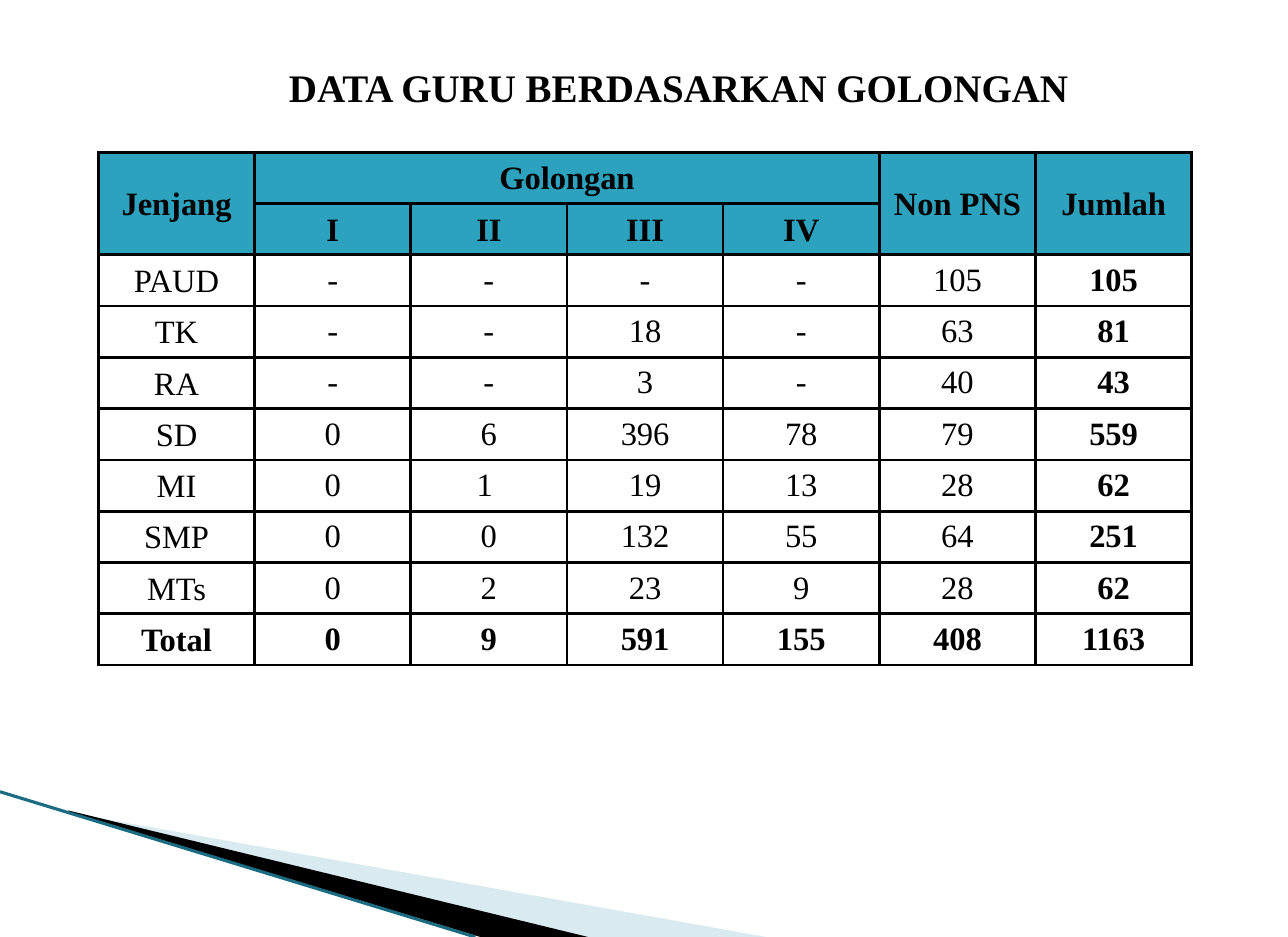
from lxml.etree import SubElement
from pptx import Presentation
from pptx.dml.color import RGBColor
from pptx.enum.shapes import MSO_CONNECTOR as Connector
from pptx.enum.text import MSO_ANCHOR as Anchor, PP_ALIGN as Align
from pptx.oxml.ns import qn
from pptx.util import Inches, Pt

COLORS = {"ink": "000000", "header": "2DA2BF", "pale": "A0CBDC", "edge": "1B6B82"}
FONT = "Times New Roman"
GRID_COLUMNS, GRID_ROWS = 550, 400

HEADINGS = [
    ["Jenjang", "Golongan", "", "", "", "Non PNS", "Jumlah"],
    ["", "I", "II", "III", "IV", "", ""],
]
TEACHERS = [
    ["PAUD", "-", "-", "-", "-", "105", "105"],
    ["TK", "-", "-", "18", "-", "63", "81"],
    ["RA", "-", "-", "3", "-", "40", "43"],
    ["SD", "0", "6", "396", "78", "79", "559"],
    ["MI", "0", "1 ", "19", "13", "28", "62"],
    ["SMP", "0", "0", "132", "55", "64", "251"],
    ["MTs", "0", "2", "23", "9", "28", "62"],
    ["Total", "0", "9", "591", "155", "408", "1163"],
]
MERGES = [((0, 0), (1, 0)), ((0, 1), (0, 4)), ((0, 5), (1, 5)), ((0, 6), (1, 6))]


def rgb(name):
    return RGBColor.from_string(COLORS[name])


def assign(target, values):
    for name, value in values.items():
        setattr(target, name, value)


class Deck:
    def __init__(self):
        self.prs = Presentation()
        assign(self.prs, {"slide_width": Inches(5.5), "slide_height": Inches(4)})
        self.slide = self.prs.slides.add_slide(self.prs.slide_layouts[5])
        self.shapes = self.slide.shapes

    def x(self, column):
        return round(self.prs.slide_width * column / GRID_COLUMNS)

    def y(self, row):
        return round(self.prs.slide_height * row / GRID_ROWS)

    def box(self, left, top, width, height):
        return self.x(left), self.y(top), self.x(width), self.y(height)

    def label(self, paragraph, text, size, bold):
        paragraph.alignment = Align.CENTER
        run = paragraph.add_run()
        run.text = text
        assign(run.font, {"name": FONT, "size": Pt(size), "bold": bold})
        run.font.color.rgb = rgb("ink")

    def title(self, text, *place):
        heading = self.shapes.title
        self.shapes._spTree.append(heading._element)
        assign(heading, dict(zip(("left", "top", "width", "height"), self.box(*place))))
        assign(heading.text_frame, {
            "vertical_anchor": Anchor.MIDDLE, "word_wrap": True,
            "margin_left": Inches(0.05), "margin_right": Inches(0.05),
            "margin_top": Inches(0.03), "margin_bottom": Inches(0.03),
        })
        self.label(heading.text_frame.paragraphs[0], text, 12, True)

    def wedge(self, points, color, opacity=100):
        corners = [(self.x(column), self.y(row)) for column, row in points]
        builder = self.shapes.build_freeform(*corners[0])
        builder.add_line_segments(corners[1:], close=True)
        wedge = builder.convert_to_shape()
        wedge.shadow.inherit = False
        wedge.fill.solid()
        wedge.fill.fore_color.rgb = rgb(color)
        wedge.line.fill.background()
        if opacity < 100:
            tint = wedge._element.spPr.find(qn("a:solidFill"))[0]
            SubElement(tint, qn("a:alpha"), val=str(opacity * 1000))

    def stripe(self, start, end, color, width):
        stripe = self.shapes.add_connector(
            Connector.STRAIGHT, self.x(start[0]), self.y(start[1]), self.x(end[0]), self.y(end[1]))
        stripe.line.color.rgb = rgb(color)
        stripe.line.width = Pt(width)
        SubElement(stripe._element.spPr, qn("a:effectLst"))

    def border(self, cell, color, width):
        properties = cell._tc.get_or_add_tcPr()
        for side in ("lnL", "lnR", "lnT", "lnB"):
            edge = SubElement(properties, qn(f"a:{side}"), w=str(Pt(width)))
            fill = SubElement(edge, qn("a:solidFill"))
            SubElement(fill, qn("a:srgbClr"), val=COLORS[color])

    def table(self, headings, records, merges, *place):
        rows = headings + records
        left, top, width, height = self.box(*place)
        table = self.shapes.add_table(len(rows), len(rows[0]), left, top, width, height).table
        assign(table, {"first_row": False, "horz_banding": False})
        for column in table.columns:
            column.width = round(width / len(rows[0]))
        for row in table.rows:
            row.height = round(height / len(rows))
        for first, last in merges:
            table.cell(*first).merge(table.cell(*last))
        for r, values in enumerate(rows):
            for c, text in enumerate(values):
                cell = table.cell(r, c)
                is_heading = r < len(headings)
                is_label = is_heading or c == 0
                side = Inches(0.01 if is_label else 0.07)
                assign(cell, {
                    "vertical_anchor": Anchor.MIDDLE, "margin_left": side, "margin_right": side,
                    "margin_top": Inches(0.01 if is_label else 0), "margin_bottom": 0,
                })
                self.border(cell, "ink", 1)
                if is_heading:
                    cell.fill.solid()
                    cell.fill.fore_color.rgb = rgb("header")
                else:
                    cell.fill.background()
                if not cell.is_spanned:
                    bold = is_heading or r == len(rows) - 1 or c == len(values) - 1
                    self.label(cell.text_frame.paragraphs[0], text, 10, bold)


def main():
    deck = Deck()
    deck.wedge([(30, 347), (327, 400), (251, 400)], "pale", 40)
    deck.wedge([(29, 346), (251, 400), (205, 400), (30, 347)], "ink")
    deck.stripe((0, 338), (203, 400), "edge", 0.95)
    deck.title("DATA GURU BERDASARKAN GOLONGAN", 42, 17, 496, 40)
    deck.table(HEADINGS, TEACHERS, MERGES, 42, 65, 467, 219)
    deck.prs.save("out.pptx")


if __name__ == "__main__":
    main()
